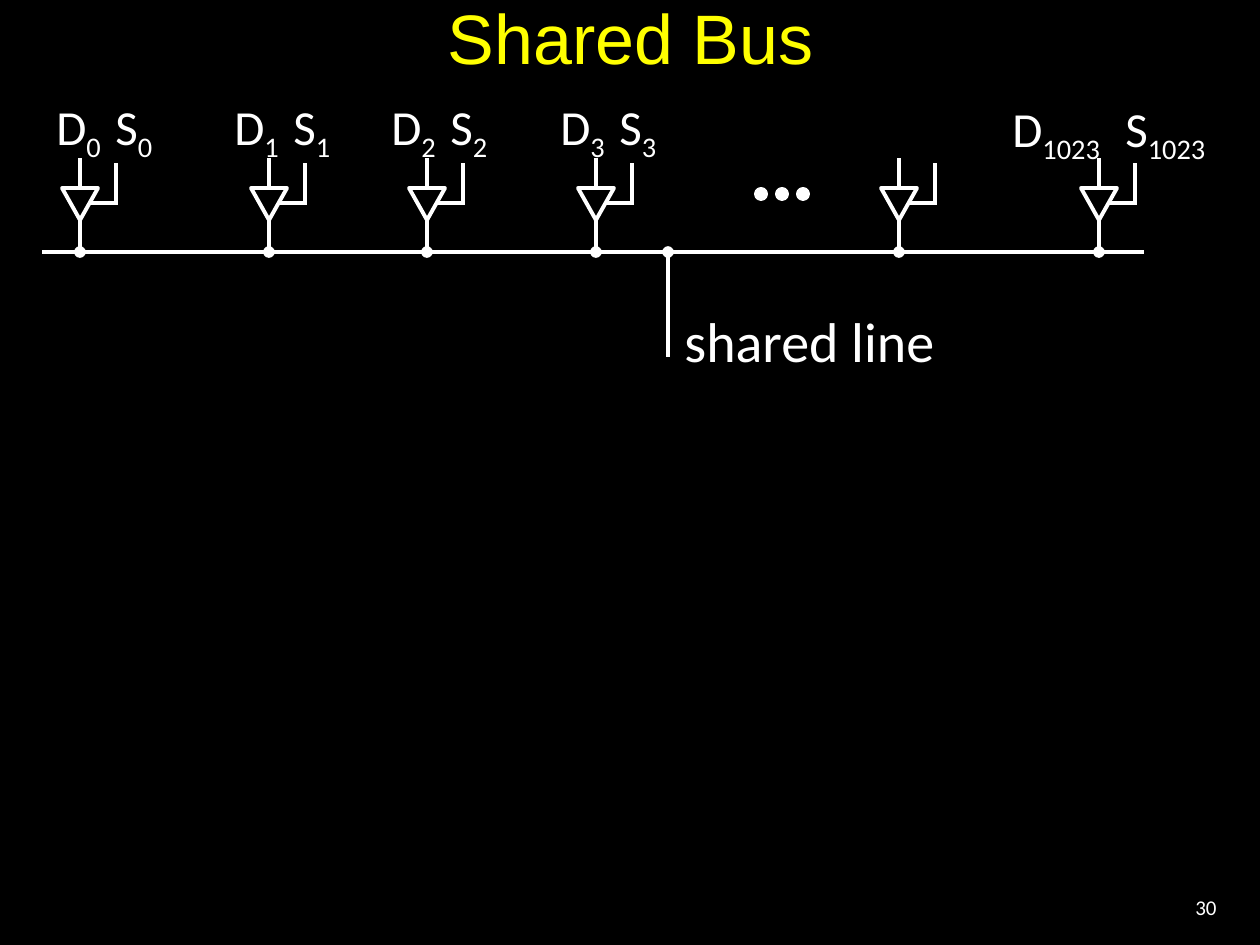
import dataclasses

import lxml.etree
import pptx
import pptx.dml.color
import pptx.enum.shapes
import pptx.enum.text
import pptx.oxml.ns
import pptx.util

PX = 914400 / 126  # EMU in one px
KIND = pptx.enum.shapes.MSO_SHAPE
LINK = pptx.enum.shapes.MSO_CONNECTOR.STRAIGHT
SIDE = pptx.enum.text.PP_ALIGN
HOLD = pptx.enum.text.MSO_ANCHOR
FIT = pptx.enum.text.MSO_AUTO_SIZE


@dataclasses.dataclass(frozen=True)
class Theme:
    back: str = "000000"
    ink: str = "FFFFFF"
    head: str = "FFFF00"
    sans: str = "Arial"
    body: str = "Calibri"
    title: int = 40
    note: int = 32
    label: int = 28
    page: int = 12
    line: float = 2.25


THEME = Theme()

# Drivers: left edge, label top, left edges of D and S, index
DRIVERS = [
    (62, 90, 44, 103, "0"),
    (251, 90, 222, 281, "1"),
    (409, 90, 379, 438, "2"),
    (578, 90, 548, 607, "3"),
    (881, 90, 0, 0, ""),
    (1081, 92, 1000, 1113, "1023"),
]


def emu(*vals):
    return [pptx.util.Emu(round(val * PX)) for val in vals]


def tint(code):
    return pptx.dml.color.RGBColor.from_string(code)


def apply(obj, vals):
    for name, val in vals.items():
        setattr(obj, name, val)


def tag(name):
    return pptx.oxml.ns.qn(name)


def write(shapes, box, text, size, color=THEME.ink, face=THEME.body,
          side=SIDE.LEFT, hold=HOLD.TOP, wrap=False, sub=""):
    frame = shapes.add_textbox(*emu(*box)).text_frame
    apply(frame, {"word_wrap": wrap, "vertical_anchor": hold,
                  "auto_size": FIT.NONE if wrap else FIT.SHAPE_TO_FIT_TEXT})
    para = frame.paragraphs[0]
    para.alignment = side
    for part in filter(None, (text, sub)):
        run = para.add_run()
        run.text = part
        apply(run.font, {"size": pptx.util.Pt(size), "name": face})
        run.font.color.rgb = tint(color)
    if sub:
        run._r.get_or_add_rPr().set("baseline", "-25000")


def stroke(item):
    item.line.color.rgb = tint(THEME.ink)
    item.line.width = pptx.util.Pt(THEME.line)


def wire(shapes, x1, y1, x2, y2, dot=False):
    item = shapes.add_connector(LINK, *emu(x1, y1, x2, y2))
    stroke(item)
    if dot:
        edge = item.line._get_or_add_ln()
        lxml.etree.SubElement(edge, tag("a:headEnd"), type="oval")
    lxml.etree.SubElement(item._element.spPr, tag("a:effectLst"))


def mark(shapes, kind, box, turn, solid):
    item = shapes.add_shape(kind, *emu(*box))
    item.shadow.inherit = False
    item.rotation = turn
    stroke(item)
    if solid:
        item.fill.solid()
        item.fill.fore_color.rgb = tint(THEME.ink)
    else:
        item.fill.background()


def driver(slide, left, top):
    """Tri-state buffer with its data, output and select wires."""
    parts = slide.shapes.add_group_shape().shapes
    mid = left + 18
    mark(parts, KIND.ISOSCELES_TRIANGLE, (left, top + 30, 36, 32), 180, False)
    wire(parts, mid, top + 30, mid, top)
    wire(parts, mid, top + 94, mid, top + 62, dot=True)
    wire(parts, left + 28, top + 45, left + 54, top + 45)
    wire(parts, left + 54, top + 47, left + 54, top + 5)


def labels(slide, top, data, pick, num):
    """Select and data names, wide enough for every digit of the index."""
    wide = 49 + 17 * len(num)
    for name, left, width in (("S", pick, wide), ("D", data, wide + 7)):
        write(slide.shapes, (left, top, width, 72), name, THEME.label, sub=num)


def bus(slide, left, top, width):
    """Shared line with its tap and caption."""
    shapes = slide.shapes
    tap = left + 626
    wire(shapes, left + width, top, left, top)
    wire(shapes, tap, top, tap, top + 105, dot=True)
    write(shapes, (tap + 4, top + 48, 278, 81), "shared line", THEME.note)


def dots(slide, left, top, step, size):
    for num in range(3):
        box = (left + num * step, top, size, size)
        mark(slide.shapes, KIND.OVAL, box, 90, True)


def frame(slide):
    """Background, title and page number."""
    fill = slide.background.fill
    fill.solid()
    fill.fore_color.rgb = tint(THEME.back)
    write(slide.shapes, (53, 0, 1155, 73), "Shared Bus", THEME.title,
          THEME.head, THEME.sans, SIDE.CENTER, HOLD.MIDDLE, True)
    write(slide.shapes, (1124, 882, 105, 50), "30", THEME.page,
          side=SIDE.RIGHT, hold=HOLD.MIDDLE, wrap=True)


def main():
    deck = pptx.Presentation()
    wide, high = emu(1260, 945)
    apply(deck, {"slide_width": wide, "slide_height": high})
    slide = deck.slides.add_slide(deck.slide_layouts[6])
    frame(slide)
    # Drivers and their labels
    for left, top, data, pick, num in DRIVERS:
        driver(slide, left, 158)
        if num:
            labels(slide, top, data, pick, num)
    # Shared line, then the ellipsis for the drivers left out
    bus(slide, 42, 252, 1102)
    dots(slide, 756, 189, 21, 10)
    deck.save("out.pptx")


if __name__ == "__main__":
    main()
